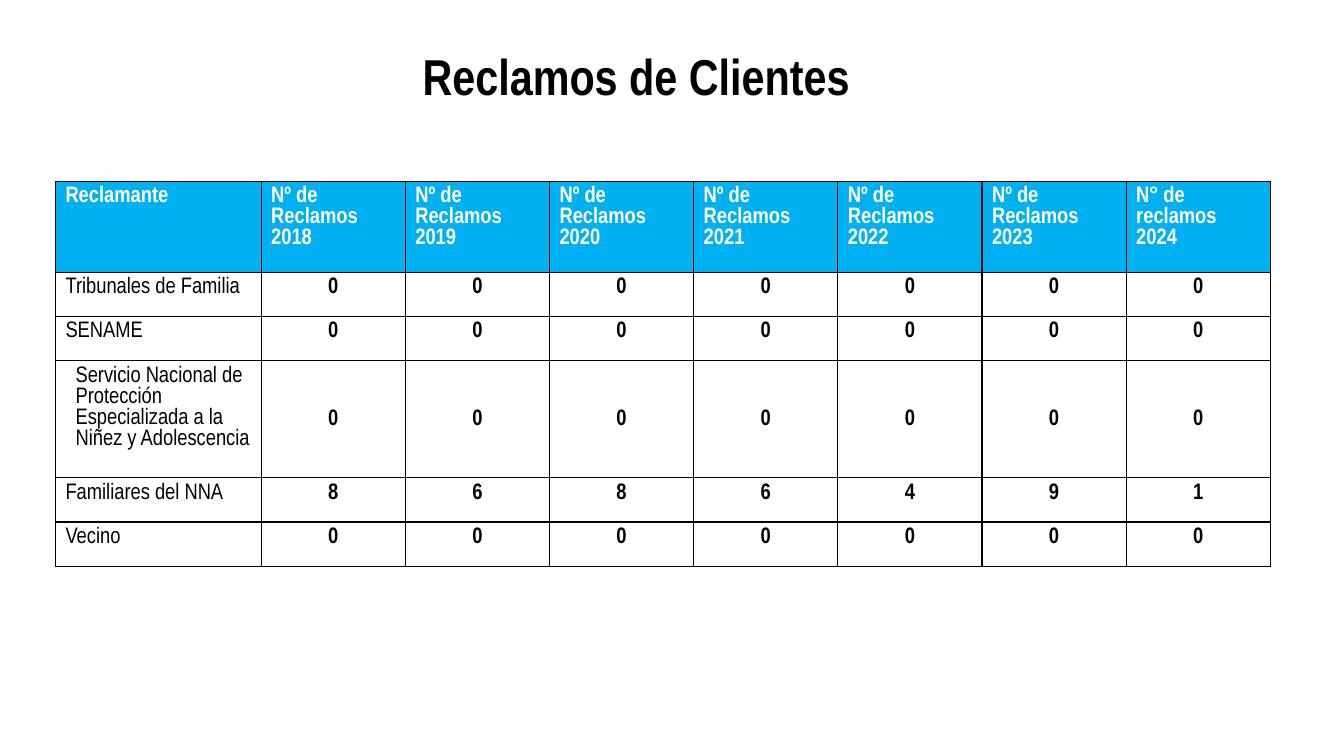
from lxml import etree
from pptx import Presentation
from pptx.dml import color
from pptx.enum import text
from pptx.oxml import ns
from pptx.util import Inches, Pt

FONT = "Arial Narrow"
HEADER_BLUE, WHITE, BLACK = "00B0F0", "FFFFFF", "000000"
HEADERS = ["Reclamante"] + [f"Nº de Reclamos {year}" for year in range(2018, 2024)] + ["N° de reclamos 2024"]
CLAIMS = [
    ("Tribunales de Familia", [0] * 7),
    ("SENAME", [0] * 7),
    ("Servicio Nacional de Protección Especializada a la Niñez y Adolescencia", [0] * 7),
    ("Familiares del NNA", [8, 6, 8, 6, 4, 9, 1]),
    ("Vecino", [0] * 7),
]
PROTECTION_ROW = 3
ROW_HEIGHTS = [0.9, 0.44, 0.44, 1.16, 0.44, 0.44]
NAME_WIDTH = 2.04


def rgb(value):
    return color.RGBColor.from_string(value)


def write(frame, content, size=16, bold=False, fill=BLACK, align=text.PP_ALIGN.LEFT, spacing=None):
    paragraph = frame.paragraphs[0]
    paragraph.alignment = align
    if spacing:
        paragraph.line_spacing = spacing
    run = paragraph.add_run()
    run.text = content
    run.font.name = FONT
    run.font.size = Pt(size)
    run.font.bold = bold
    run.font.color.rgb = rgb(fill)
    return paragraph


def add_borders(cell, width=1, line_color=BLACK):
    properties = cell._tc.get_or_add_tcPr()
    for side in ("lnL", "lnR", "lnT", "lnB"):
        line = etree.SubElement(properties, ns.qn(f"a:{side}"), w=str(Pt(width)))
        solid = etree.SubElement(line, ns.qn("a:solidFill"))
        etree.SubElement(solid, ns.qn("a:srgbClr"), val=line_color)


def format_cell(cell, fill):
    add_borders(cell)
    cell.fill.solid()
    cell.fill.fore_color.rgb = rgb(fill)


def build_title(slide, left, top, width, height):
    title = slide.shapes.title
    title.left, title.top, title.width, title.height = map(Inches, (left, top, width, height))
    frame = title.text_frame
    frame.auto_size = text.MSO_AUTO_SIZE.NONE
    frame.vertical_anchor = text.MSO_ANCHOR.TOP
    write(frame, "Reclamos de Clientes", size=36, bold=True, align=text.PP_ALIGN.CENTER, spacing=0.9)


def build_claims_table(slide, left, top, width):
    frame = slide.shapes.add_table(len(CLAIMS) + 1, len(HEADERS), Inches(left), Inches(top),
                                   Inches(width), Inches(sum(ROW_HEIGHTS)))
    table = frame.table
    table.horz_banding = False
    year_width = (width - NAME_WIDTH) / (len(HEADERS) - 1)
    for index, column in enumerate(table.columns):
        column.width = Inches(year_width if index else NAME_WIDTH)
    for row, height in zip(table.rows, ROW_HEIGHTS):
        row.height = Inches(height)
    for index, header in enumerate(HEADERS):
        cell = table.cell(0, index)
        format_cell(cell, HEADER_BLUE)
        write(cell.text_frame, header, bold=True, fill=WHITE)
    for row_index, (claimant, counts) in enumerate(CLAIMS, 1):
        name_cell = table.cell(row_index, 0)
        format_cell(name_cell, WHITE)
        paragraph = write(name_cell.text_frame, claimant)
        if row_index == PROTECTION_ROW:
            paragraph._p.get_or_add_pPr().set("marL", str(Inches(0.1)))
        for column_index, count in enumerate(counts, 1):
            cell = table.cell(row_index, column_index)
            format_cell(cell, WHITE)
            write(cell.text_frame, str(count), bold=True, align=text.PP_ALIGN.CENTER)
            if row_index == PROTECTION_ROW:
                cell.vertical_anchor = text.MSO_ANCHOR.MIDDLE


def main():
    presentation = Presentation()
    presentation.slide_width, presentation.slide_height = Inches(13.33), Inches(7.5)
    slide = presentation.slides.add_slide(presentation.slide_layouts[5])
    build_claims_table(slide, 0.55, 1.8, 12.05)
    build_title(slide, 2, 0.47, 8.62, 0.81)
    presentation.save("out.pptx")


if __name__ == "__main__":
    main()
